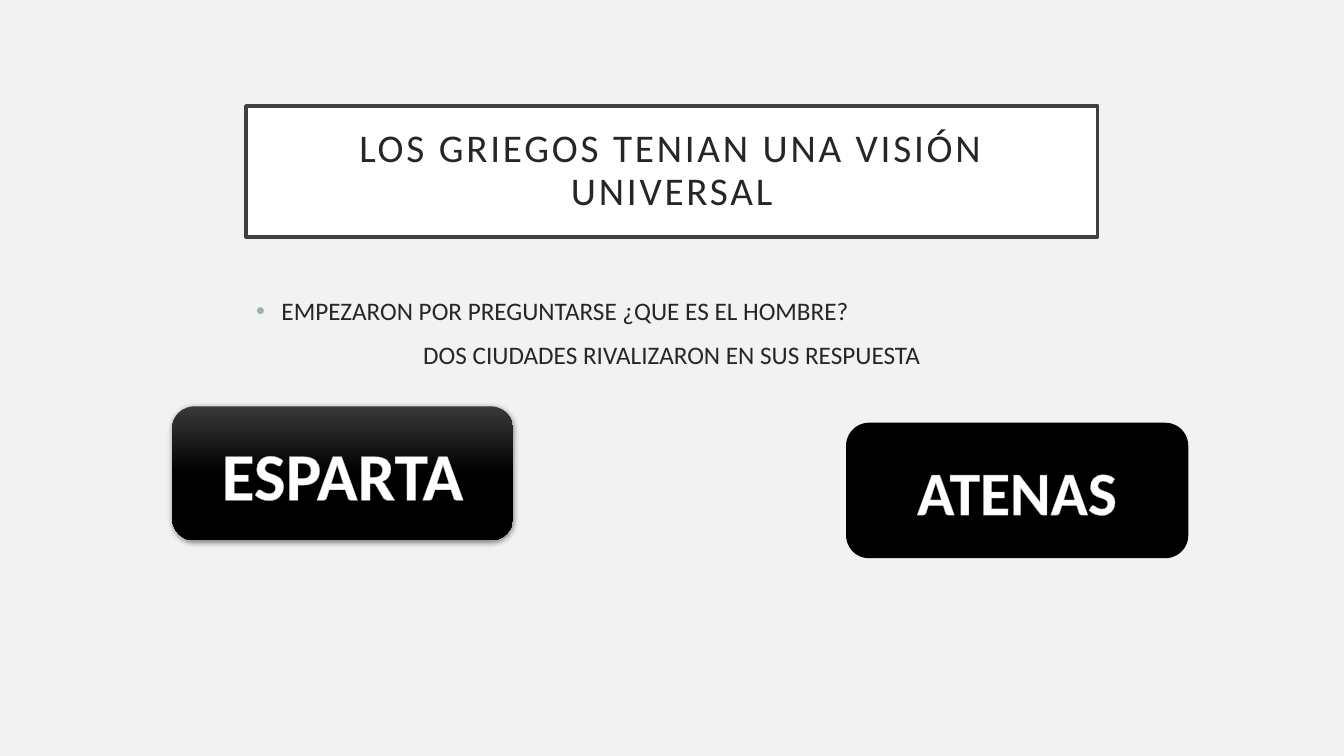
from lxml.etree import SubElement
from pptx import Presentation
from pptx.dml.color import RGBColor
from pptx.enum.shapes import MSO_SHAPE
from pptx.enum.text import MSO_ANCHOR, PP_ALIGN
from pptx.oxml.ns import qn
from pptx.util import Cm, Pt

TITLE = "LOS GRIEGOS TENIAN UNA VISIÓN UNIVERSAL"
LINES = [
    ("EMPEZARON POR PREGUNTARSE ¿QUE ES EL HOMBRE?", True),
    ("DOS CIUDADES RIVALIZARON EN SUS RESPUESTA", False),
]
CITIES = [
    ("ESPARTA", 4.34, 10.24, 48, True),
    ("ATENAS", 21.34, 10.67, 44, False),
]
CITY_W, CITY_H = Cm(8.59), Cm(3.38)
LEFT, WIDTH = Cm(6.2), Cm(21.46)

WHITE = RGBColor(0xFF, 0xFF, 0xFF)
BLACK = RGBColor(0, 0, 0)
PAPER = RGBColor(0xF2, 0xF2, 0xF2)
INK = RGBColor(0x26, 0x26, 0x26)
FRAME = RGBColor(0x40, 0x40, 0x40)
SHINE = RGBColor(0x39, 0x39, 0x39)
STEEL = RGBColor(0x9B, 0xAF, 0xB5)


def add(node, tag, **attrs):
    """Append a drawing element with the given attributes."""
    return SubElement(node, qn("a:" + tag), {k: str(v) for k, v in attrs.items()})


def style(para, size, color, bold=False):
    """Set the font of a whole paragraph."""
    font = para.font
    font.name, font.size, font.bold = "Calibri", Pt(size), bold
    font.color.rgb = color


def place(shape, left, top, width, height):
    """Move and size a placeholder."""
    shape.left, shape.top = left, top
    shape.width, shape.height = width, height


def add_title(slide):
    """Fill the framed title."""
    box = slide.shapes.title
    place(box, LEFT, Cm(2.67), WIDTH, Cm(3.3))
    box.fill.solid()
    box.fill.fore_color.rgb = WHITE
    box.line.color.rgb = FRAME
    box.line.width = Pt(2.5)
    frame = box.text_frame
    frame.text = TITLE
    frame.vertical_anchor = MSO_ANCHOR.MIDDLE
    frame.margin_left = frame.margin_right = Cm(0.5)
    frame.margin_top = frame.margin_bottom = Cm(0.5)
    para = frame.paragraphs[0]
    para.alignment = PP_ALIGN.CENTER
    para.line_spacing = 0.9
    style(para, 28, INK)
    para._p.pPr.get_or_add_defRPr().set("spc", "200")


def add_body(slide):
    """Fill the body with one bullet and one centred line."""
    box = slide.placeholders[1]
    place(box, LEFT, Cm(7.32), WIDTH, Cm(8.61))
    frame = box.text_frame
    for i, (text, bullet) in enumerate(LINES):
        para = frame.add_paragraph() if i else frame.paragraphs[0]
        para.text = text
        para.space_before = Pt(10 if i else 0)
        props = para._p.get_or_add_pPr()
        indent = Cm(0.64) if bullet else 0
        props.set("marL", str(indent))
        props.set("indent", str(-indent))
        if bullet:
            add(add(props, "buClr"), "srgbClr", val=STEEL)
            add(props, "buFont", typeface="Arial")
            add(props, "buChar", char="•")
        else:
            add(props, "buNone")
            para.alignment = PP_ALIGN.CENTER
        style(para, 18, INK)


def add_city(slide, name, left, top, size, glossy):
    """Draw one rounded city button."""
    box = slide.shapes.add_shape(
        MSO_SHAPE.ROUNDED_RECTANGLE, Cm(left), Cm(top), CITY_W, CITY_H)
    if glossy:
        box.fill.gradient()
        box.fill.gradient_angle = 270
        for stop, spot, color in zip(box.fill.gradient_stops, (0, 0.5), (SHINE, BLACK)):
            stop.position, stop.color.rgb = spot, color
        box.line.fill.background()
    else:
        box.fill.solid()
        box.fill.fore_color.rgb = BLACK
        box.line.color.rgb = BLACK
        box.line.width = Pt(1)
    box.shadow.inherit = False
    if glossy:
        glow = add(box._element.spPr.find(qn("a:effectLst")), "outerShdw",
                   blurRad=Pt(4.4), dist=Pt(1.2), dir=5400000, rotWithShape=0)
        add(add(glow, "srgbClr", val=BLACK), "alpha", val=45000)
    frame = box.text_frame
    frame.text = name
    frame.vertical_anchor = MSO_ANCHOR.MIDDLE
    para = frame.paragraphs[0]
    para.alignment = PP_ALIGN.CENTER
    edge = add(para._p.get_or_add_pPr().get_or_add_defRPr(), "ln", w=Pt(0.52))
    add(add(edge, "solidFill"), "srgbClr", val=STEEL)
    style(para, size, WHITE, True)


def main():
    """Build and save the slide."""
    deck = Presentation()
    deck.slide_width, deck.slide_height = Cm(33.87), Cm(19.05)
    slide = deck.slides.add_slide(deck.slide_layouts[1])
    slide.background.fill.solid()
    slide.background.fill.fore_color.rgb = PAPER
    add_title(slide)
    add_body(slide)
    for city in CITIES:
        add_city(slide, *city)
    deck.save("out.pptx")


if __name__ == "__main__":
    main()
